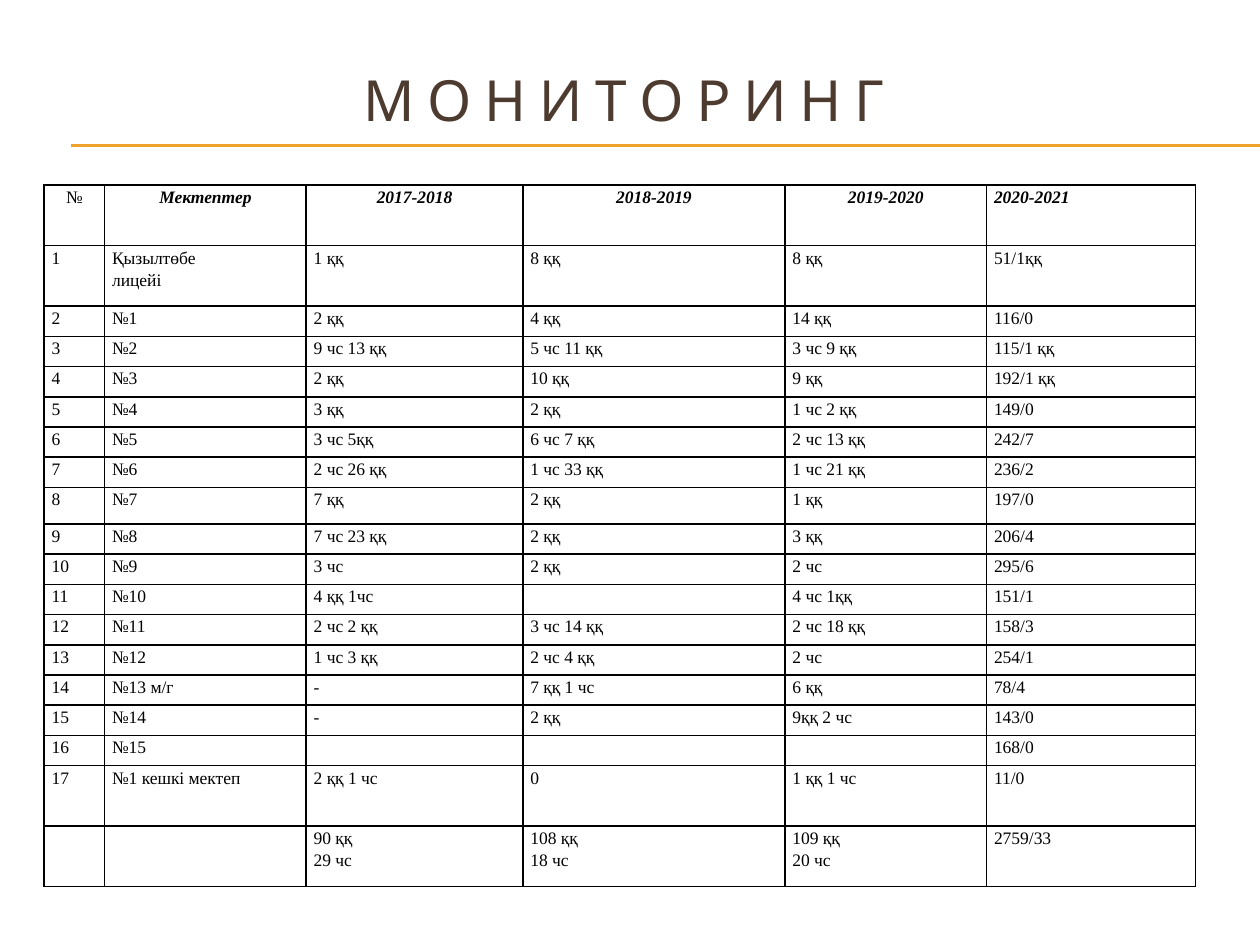
import pptx
import pptx.dml.color
import pptx.enum.shapes
import pptx.enum.text
import pptx.oxml.ns
import pptx.util
from lxml import etree

Inches = pptx.util.Inches
Pt = pptx.util.Pt
qn = pptx.oxml.ns.qn
ALIGN = pptx.enum.text.PP_ALIGN

COLUMN_WIDTHS = [0.48, 1.6, 1.72, 2.08, 1.6, 1.66]
ROW_HEIGHT = 0.24
SPECIAL_HEIGHTS = {0: 0.48, 1: 0.48, 8: 0.29, 17: 0.48, 18: 0.48}
BODY_FONT = {"name": "Times New Roman", "size": Pt(10), "bold": False, "italic": False}
HEADER_FONT = {**BODY_FONT, "bold": True, "italic": True}
TITLE_FONT = {"name": "Cabin", "size": Pt(32.4), "bold": False}

HEADERS = ["№", "Мектептер", "2017-2018", "2018-2019", "2019-2020", "2020-2021"]
SCHOOLS = [
    ["Қызылтөбе\nлицейі", "1 ққ", "8 ққ", "8 ққ", "51/1ққ"],
    ["№1", "2 ққ", "4 ққ", "14 ққ", "116/0"],
    ["№2", "9 чс 13 ққ", "5 чс 11 ққ", "3 чс 9 ққ", "115/1 ққ"],
    ["№3", "2 ққ", "10 ққ", "9 ққ", "192/1 ққ"],
    ["№4", "3 ққ", "2 ққ", "1 чс 2 ққ", "149/0"],
    ["№5", "3 чс 5ққ", "6 чс 7 ққ", "2 чс 13 ққ", "242/7"],
    ["№6", "2 чс 26 ққ", "1 чс 33 ққ", "1 чс 21 ққ", "236/2"],
    ["№7", "7 ққ", "2 ққ", "1 ққ", "197/0"],
    ["№8", "7 чс 23 ққ", "2 ққ", "3 ққ", "206/4"],
    ["№9", "3 чс", "2 ққ", "2 чс", "295/6"],
    ["№10", "4 ққ 1чс", "", "4 чс 1ққ", "151/1"],
    ["№11", "2 чс 2 ққ", "3 чс 14 ққ", "2 чс 18 ққ", "158/3"],
    ["№12", "1 чс 3 ққ", "2 чс 4 ққ", "2 чс", "254/1"],
    ["№13 м/г", "-", "7 ққ 1 чс", "6 ққ", "78/4"],
    ["№14", "-", "2 ққ", "9ққ 2 чс", "143/0"],
    ["№15", "", "", "", "168/0"],
    ["№1 кешкі мектеп", "2 ққ 1 чс", "0", "1 ққ 1 чс", "11/0"],
]
TOTALS = ["", "", "90 ққ\n29 чс", "108 ққ\n18 чс", "109 ққ\n20 чс", "2759/33"]


def rgb(value):
    """Return the colour for a hex string."""
    return pptx.dml.color.RGBColor.from_string(value)


def set_values(target, values):
    """Set each attribute of the target from a dict."""
    for name, value in values.items():
        setattr(target, name, value)


def format_font(font, values, color):
    """Apply format values and a colour to a font."""
    set_values(font, values)
    font.color.rgb = rgb(color)


def add_title(slide, text):
    """Fill and place the title placeholder."""
    title = slide.shapes.title
    set_values(title, {"left": Inches(0.33), "top": Inches(0.5),
                       "width": Inches(9.5), "height": Inches(0.57)})
    set_values(title.text_frame, {
        "margin_left": Inches(0.1), "margin_right": Inches(0.36),
        "margin_top": 0, "margin_bottom": 0, "word_wrap": True,
        "vertical_anchor": pptx.enum.text.MSO_ANCHOR.MIDDLE})
    paragraph = title.text_frame.paragraphs[0]
    paragraph.alignment = ALIGN.CENTER
    run = paragraph.add_run()
    run.text = text
    format_font(run.font, TITLE_FONT, "4E3B30")


def add_rule(slide, top):
    """Draw a thin horizontal rule that runs to the right edge."""
    rule = slide.shapes.add_connector(
        pptx.enum.shapes.MSO_CONNECTOR.STRAIGHT,
        Inches(0.56), Inches(top), Inches(10), Inches(top))
    rule.line.color.rgb = rgb("F0A22E")
    rule.line.width = Pt(0.75)
    etree.SubElement(rule._element.spPr, qn("a:effectLst"))


def add_borders(cell, color):
    """Give a cell a one-point border on every side."""
    properties = cell._tc.get_or_add_tcPr()
    for index, side in enumerate(["lnL", "lnR", "lnT", "lnB"]):
        line = etree.Element(qn(f"a:{side}"), w=str(Pt(1)))
        fill = etree.SubElement(line, qn("a:solidFill"))
        etree.SubElement(fill, qn("a:srgbClr"), val=color)
        properties.insert(index, line)


def fill_cell(cell, text, font_values, alignment):
    """Write a cell's paragraphs and format the cell."""
    set_values(cell, {"margin_left": Inches(0.06), "margin_right": Inches(0.06),
                      "margin_top": 0, "margin_bottom": 0})
    cell.fill.background()
    add_borders(cell, "000000")
    cell.text_frame.text = text
    for paragraph in cell.text_frame.paragraphs:
        set_values(paragraph, {"alignment": alignment, "line_spacing": 1.15})
        for run in paragraph.runs:
            format_font(run.font, font_values, "000000")
        if not text:
            etree.SubElement(paragraph._p, qn("a:endParaRPr"), sz="1000")


def add_monitoring_table(slide):
    """Add the table of schools by year."""
    numbered = [[str(number), *school] for number, school in enumerate(SCHOOLS, 1)]
    rows = [HEADERS, *numbered, TOTALS]
    heights = [SPECIAL_HEIGHTS.get(index, ROW_HEIGHT) for index in range(len(rows))]
    table = slide.shapes.add_table(
        len(rows), len(HEADERS), Inches(0.35), Inches(1.47),
        Inches(sum(COLUMN_WIDTHS)), Inches(sum(heights))).table
    set_values(table, {"first_row": False, "horz_banding": False})
    for column, width in zip(table.columns, COLUMN_WIDTHS):
        column.width = Inches(width)
    for row_index, values in enumerate(rows):
        table.rows[row_index].height = Inches(heights[row_index])
        for column_index, text in enumerate(values):
            is_header = row_index == 0
            font_values = HEADER_FONT if is_header and column_index else BODY_FONT
            centred = is_header and column_index < len(HEADERS) - 1
            fill_cell(table.cell(row_index, column_index), text, font_values,
                      ALIGN.CENTER if centred else ALIGN.LEFT)


def main():
    """Build the monitoring slide and save it."""
    presentation = pptx.Presentation()
    set_values(presentation, {"slide_width": Inches(10), "slide_height": Inches(7.5)})
    slide = presentation.slides.add_slide(presentation.slide_layouts[5])
    for top in (1.15, 1.16):
        add_rule(slide, top)
    add_title(slide, "М О Н И Т О Р И Н Г")
    add_monitoring_table(slide)
    presentation.save("out.pptx")


if __name__ == "__main__":
    main()
